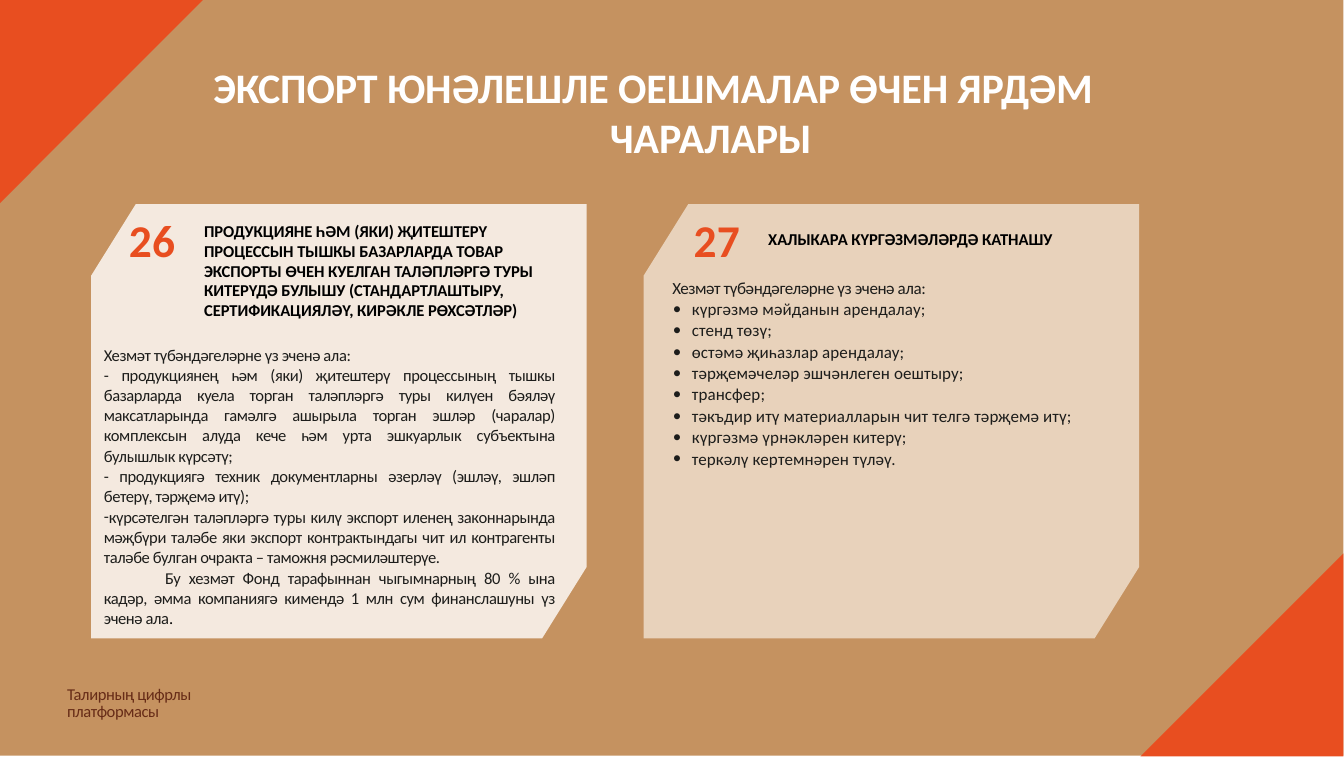
"""Build the slide on support measures for export-oriented organisations."""
from lxml import etree
from pptx import Presentation
from pptx import util as u
from pptx.dml.color import RGBColor
from pptx.enum import shapes, text
from pptx.oxml.ns import qn

COLORS = {
    "ground": "C59260", "accent": "E84E20", "card_left": "F4E9DF",
    "card_right": "E8D2BB", "white": "FFFFFF", "black": "000000",
    "ink": "1D1D1B", "footer": "672C17",
}
FONT = "Calibri"
JUSTIFY = text.PP_ALIGN.JUSTIFY

INTRO = "Хезмәт түбәндәгеләрне үз эченә ала:"
STANDARDS_HEADING = (
    "ПРОДУКЦИЯНЕ ҺӘМ (ЯКИ) ҖИТЕШТЕРҮ ПРОЦЕССЫН ТЫШКЫ БАЗАРЛАРДА ТОВАР "
    "ЭКСПОРТЫ ӨЧЕН КУЕЛГАН ТАЛӘПЛӘРГӘ ТУРЫ КИТЕРҮДӘ БУЛЫШУ "
    "(СТАНДАРТЛАШТЫРУ, СЕРТИФИКАЦИЯЛӘҮ, КИРӘКЛЕ РӨХСӘТЛӘР)"
)
STANDARDS_ITEMS = [
    "- продукциянең һәм (яки) җитештерү процессының тышкы базарларда куела "
    "торган таләпләргә туры килүен бәяләү максатларында гамәлгә ашырыла "
    "торган эшләр (чаралар) комплексын алуда кече һәм урта эшкуарлык "
    "субъектына булышлык күрсәтү;",
    "- продукциягә техник документларны әзерләү (эшләү, эшләп бетерү, "
    "тәрҗемә итү);",
]
CUSTOMS_ITEM = (
    "күрсәтелгән таләпләргә туры килү экспорт иленең законнарында мәҗбүри "
    "таләбе яки экспорт контрактындагы чит ил контрагенты таләбе булган "
    "очракта – таможня рәсмиләштерүе."
)
FUNDING_NOTE = (
    "Бу хезмәт Фонд тарафыннан чыгымнарның 80 % ына кадәр, әмма компаниягә "
    "кимендә 1 млн сум финанслашуны үз эченә ала"
)
EXHIBITION_ITEMS = [
    "күргәзмә мәйданын арендалау;",
    "стенд төзү;",
    "өстәмә җиһазлар арендалау;",
    "тәрҗемәчеләр эшчәнлеген оештыру;",
    "трансфер;",
    "тәкъдир итү материалларын чит телгә тәрҗемә итү;",
    "күргәзмә үрнәкләрен китерү;",
    "теркәлү кертемнәрен түләү.",
]


def paint(sp, color):
    """Give a shape a flat fill without line or shadow."""
    sp.shadow.inherit = False
    sp.fill.solid()
    sp.fill.fore_color.rgb = RGBColor.from_string(COLORS[color])
    sp.line.fill.background()


def add_polygon(s, points, color):
    """Draw a closed outline through points given in inches."""
    corners = [(u.Inches(x), u.Inches(y)) for x, y in points]
    builder = s.shapes.build_freeform(*corners[0])
    builder.add_line_segments(corners[1:], close=True)
    paint(builder.convert_to_shape(), color)


def add_card(s, left, color):
    """Draw a card with its top left and bottom right corners cut."""
    top, right, bottom, cut_x, cut_y = 3.34, left + 8.11, 10.44, 0.73, 1.17
    add_polygon(s, [
        (right, top), (left + cut_x, top), (left, top + cut_y),
        (left, bottom), (right - cut_x, bottom), (right, bottom - cut_y),
    ], color)


def set_frame(sp, box, inset_top=0.01):
    """Place a text shape and return its prepared text frame."""
    sp.left, sp.top, sp.width, sp.height = (u.Inches(v) for v in box)
    tf = sp.text_frame
    tf.word_wrap = True
    tf.auto_size = text.MSO_AUTO_SIZE.NONE
    tf.vertical_anchor = text.MSO_ANCHOR.TOP
    tf.margin_left = tf.margin_right = tf.margin_bottom = 0
    tf.margin_top = u.Inches(inset_top)
    return tf


def add_box(s, box, inset_top=0.01):
    """Add a text box and return its text frame."""
    return set_frame(s.shapes.add_textbox(0, 0, 0, 0), box, inset_top)


def use_placeholder(s, sp, box):
    """Bring a placeholder to the front and return its text frame."""
    s.shapes._spTree.append(sp._element)
    return set_frame(sp, box)


def add_para(tf, align=text.PP_ALIGN.LEFT, before=0.8, line=None,
             margin=0.01, indent=0, bullet=None):
    """Return the next paragraph of a frame, spaced and indented."""
    p = tf.paragraphs[0]
    if p.runs:
        p = tf.add_paragraph()
    p.alignment = align
    p.space_before = u.Pt(before)
    if line:
        p.line_spacing = line
    pPr = p._p.get_or_add_pPr()
    pPr.set("marL", str(u.Inches(margin)))
    pPr.set("indent", str(u.Inches(indent)))
    if bullet:
        etree.SubElement(pPr, qn("a:buFont")).set("typeface", FONT)
        etree.SubElement(pPr, qn("a:buChar")).set("char", bullet)
    else:
        etree.SubElement(pPr, qn("a:buNone"))
    return p


def add_run(p, words, size, color, spacing, bold=False):
    """Add a run with its size, colour and letter spacing in points."""
    r = p.add_run()
    r.text = words
    r.font.name = FONT
    r.font.size = u.Pt(size)
    r.font.bold = bold
    r.font.color.rgb = RGBColor.from_string(COLORS[color])
    r._r.get_or_add_rPr().set("spc", str(round(spacing * 100)))


def add_number(s, left, number):
    """Add the large number of a card."""
    p = add_para(add_box(s, (left, 3.46, 0.79, 0.92)), before=1.1)
    add_run(p, number, 53.5, "accent", 0.2, bold=True)


def add_heading(s, box, words, inset_top, before):
    """Add the bold heading of a card."""
    p = add_para(add_box(s, box, inset_top), before=before)
    add_run(p, words, 19.5, "black", -0.1, bold=True)


def add_standards_text(s):
    """Fill the left card with its justified text."""
    tf = add_box(s, (1.69, 5.62, 7.39, 4.71))
    paragraphs = [(words, {}) for words in [INTRO, *STANDARDS_ITEMS]]
    paragraphs += [(CUSTOMS_ITEM, {"bullet": "-"}), (FUNDING_NOTE, {"indent": 1})]
    for words, options in paragraphs:
        p = add_para(tf, JUSTIFY, line=1.01, **options)
        add_run(p, words, 19.5, "ink", -0.5)
    add_run(p, ".", 19.5, "black", -0.3)


def add_exhibition_list(s):
    """Fill the right card with its bulleted list."""
    tf = use_placeholder(s, s.placeholders[1], (10.99, 4.52, 7.19, 4.59))
    add_run(add_para(tf, JUSTIFY, line=1.01), INTRO, 20, "ink", -0.5)
    for item in EXHIBITION_ITEMS:
        p = add_para(tf, before=0.9, line=1.01, margin=0.33, indent=-0.31,
                     bullet="•")
        add_run(p, item, 20, "ink", 0.1)


def add_title(s):
    """Write the slide title with its hanging indent."""
    tf = use_placeholder(s, s.shapes.title, (3.48, 0.99, 17.35, 1.68))
    p = add_para(tf, line=1.0, margin=6.5, indent=-6.49)
    add_run(p, "ЭКСПОРТ ЮНӘЛЕШЛЕ ОЕШМАЛАР ӨЧЕН ЯРДӘМ ЧАРАЛАРЫ", 49.5,
            "white", -0.1, bold=True)


def main():
    """Build and save the slide."""
    prs = Presentation()
    prs.slide_width, prs.slide_height = u.Inches(21.99), u.Inches(12.38)
    s = prs.slides.add_slide(prs.slide_layouts[1])
    ground = s.shapes.add_shape(shapes.MSO_SHAPE.RECTANGLE, 0, 0,
                                u.Inches(21.98), u.Inches(12.36))
    paint(ground, "ground")
    add_polygon(s, [(3.32, 0), (0, 0), (0, 3.32)], "accent")
    add_card(s, 10.53, "card_right")
    add_heading(s, (12.56, 3.66, 5.83, 0.41),
                "ХАЛЫКАРА КҮРГӘЗМӘЛӘРДӘ КАТНАШУ", 0.08, 5.5)
    add_polygon(s, [(21.98, 9.05), (18.66, 12.37), (21.98, 12.37)], "accent")
    add_card(s, 1.49, "card_left")
    add_number(s, 2.1, "26")
    footer = add_para(add_box(s, (1.09, 11.22, 2.41, 0.57), 0.03),
                      before=0, line=u.Pt(19.2))
    add_run(footer, "Талирның цифрлы платформасы", 19.5, "footer", -0.5)
    add_heading(s, (3.33, 3.6, 5.98, 1.65), STANDARDS_HEADING, 0.01, 0.9)
    add_standards_text(s)
    add_title(s)
    add_number(s, 11.34, "27")
    add_exhibition_list(s)
    prs.save("out.pptx")


if __name__ == "__main__":
    main()
